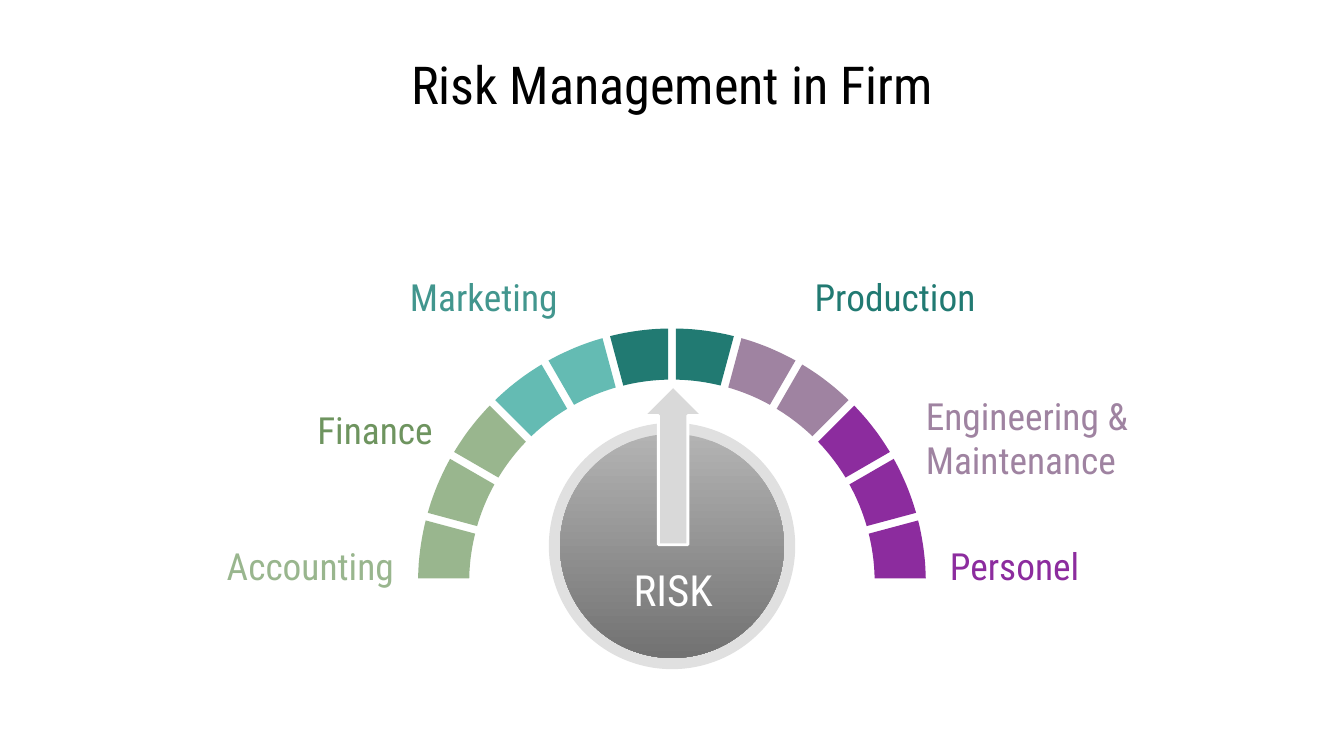
from math import asin, cos, pi, sin

from pptx import Presentation
from pptx.dml.color import RGBColor
from pptx.enum.shapes import MSO_SHAPE
from pptx.enum.text import MSO_ANCHOR, MSO_AUTO_SIZE, PP_ALIGN
from pptx.util import Pt

FONT = "Roboto Condensed"
BLACK = RGBColor(0x00, 0x00, 0x00)
WHITE = RGBColor(0xFF, 0xFF, 0xFF)
RIM = RGBColor(0xE0, 0xE0, 0xE0)
KNOB_TOP = RGBColor(0xB3, 0xB3, 0xB3)
KNOB_BOTTOM = RGBColor(0x72, 0x72, 0x72)
POINTER = RGBColor(0xD9, 0xD9, 0xD9)
SAGE = RGBColor(0x99, 0xB6, 0x8E)
GREEN = RGBColor(0x6E, 0x94, 0x5F)
AQUA = RGBColor(0x64, 0xBB, 0xB3)
SEA = RGBColor(0x42, 0x96, 0x8E)
TEAL = RGBColor(0x21, 0x7A, 0x72)
MAUVE = RGBColor(0x9F, 0x83, 0xA1)
PURPLE = RGBColor(0x8C, 0x2C, 0x9E)


def format_text(shape, text, size, color, alignment, inset_x=7.2, inset_y=7.2):
    frame = shape.text_frame
    frame.text = text
    frame.word_wrap = True
    frame.auto_size = MSO_AUTO_SIZE.NONE
    frame.vertical_anchor = MSO_ANCHOR.MIDDLE
    frame.margin_left = frame.margin_right = Pt(inset_x)
    frame.margin_top = frame.margin_bottom = Pt(inset_y)
    paragraph = frame.paragraphs[0]
    paragraph.alignment = alignment
    paragraph.font.name = FONT
    paragraph.font.size = Pt(size)
    paragraph.font.color.rgb = color


def arc_points(radius, start, end, half_gap, steps=12):
    """Points of an arc, trimmed so that its ends leave a gap of even width."""
    trim = asin(half_gap / radius)
    first, last = start + trim, end - trim
    angles = [first + (last - first) * step / steps for step in range(steps + 1)]
    return [(CENTER_X + radius * cos(angle), GAUGE_Y + radius * sin(angle))
            for angle in angles]


presentation = Presentation()
presentation.slide_width = Pt(720)
presentation.slide_height = Pt(405)
slide = presentation.slides.add_slide(presentation.slide_layouts[5])
shapes = slide.shapes

title = shapes.title
title.left, title.top, title.width, title.height = Pt(36), Pt(32.4), Pt(648), Pt(25.2)
format_text(title, "Risk Management in Firm", 28, BLACK, PP_ALIGN.CENTER)

# Knob
CENTER_X, KNOB_Y = 360, 292.5
discs = []
for radius in (66, 60):
    disc = shapes.add_shape(MSO_SHAPE.OVAL, Pt(CENTER_X - radius), Pt(KNOB_Y - radius),
                            Pt(2 * radius), Pt(2 * radius))
    disc.shadow.inherit = False
    disc.line.fill.background()
    discs.append(disc)
rim, knob = discs
rim.fill.solid()
rim.fill.fore_color.rgb = RIM
knob.fill.gradient()
knob.fill.gradient_angle = 270
for stop, position, color in zip(knob.fill.gradient_stops, (0, 1), (KNOB_TOP, KNOB_BOTTOM)):
    stop.position = position
    stop.color.rgb = color

pointer = shapes.add_shape(MSO_SHAPE.UP_ARROW, Pt(344.8), Pt(206.8), Pt(31.6), Pt(85))
pointer.shadow.inherit = False
pointer.fill.solid()
pointer.fill.fore_color.rgb = POINTER
pointer.line.color.rgb = WHITE
pointer.line.width = Pt(1.5)

# Gauge: twelve equal segments from left to right
GAUGE_Y = 312
OUTER_RADIUS, INNER_RADIUS, HALF_GAP = 136, 108.6, 2.1
segment_colors = [SAGE] * 3 + [AQUA] * 2 + [TEAL] * 2 + [MAUVE] * 2 + [PURPLE] * 3
sweep = pi / len(segment_colors)
for index, color in enumerate(segment_colors):
    start = pi + index * sweep
    outer = arc_points(OUTER_RADIUS, start, start + sweep, HALF_GAP)
    inner = arc_points(INNER_RADIUS, start, start + sweep, HALF_GAP)
    outline = [(x * 100, y * 100) for x, y in outer + inner[::-1]]
    builder = shapes.build_freeform(*outline[0], scale=Pt(0.01))
    builder.add_line_segments(outline[1:], close=True)
    segment = builder.convert_to_shape()
    segment.shadow.inherit = False
    segment.fill.solid()
    segment.fill.fore_color.rgb = color
    segment.line.fill.background()

# Labels
risk = shapes.add_textbox(Pt(334.1), Pt(306), Pt(53.3), Pt(19.4))
format_text(risk, "RISK", 23, WHITE, PP_ALIGN.CENTER, 2.9, 1.4)

labels = [
    ("Accounting", 59.8, 291.6, SAGE, PP_ALIGN.RIGHT),
    ("Personel", 501.8, 291.6, PURPLE, PP_ALIGN.LEFT),
    ("Marketing", 180, 147.6, SEA, PP_ALIGN.CENTER),
    ("Finance", 80.6, 218.9, GREEN, PP_ALIGN.RIGHT),
    ("Production", 400.3, 147.6, TEAL, PP_ALIGN.CENTER),
    ("Engineering & Maintenance", 488.9, 223.2, MAUVE, PP_ALIGN.LEFT),
]
for text, left, top, color, alignment in labels:
    label = shapes.add_textbox(Pt(left), Pt(top), Pt(158.4), Pt(22.3))
    format_text(label, text, 20, color, alignment)

presentation.save("out.pptx")
